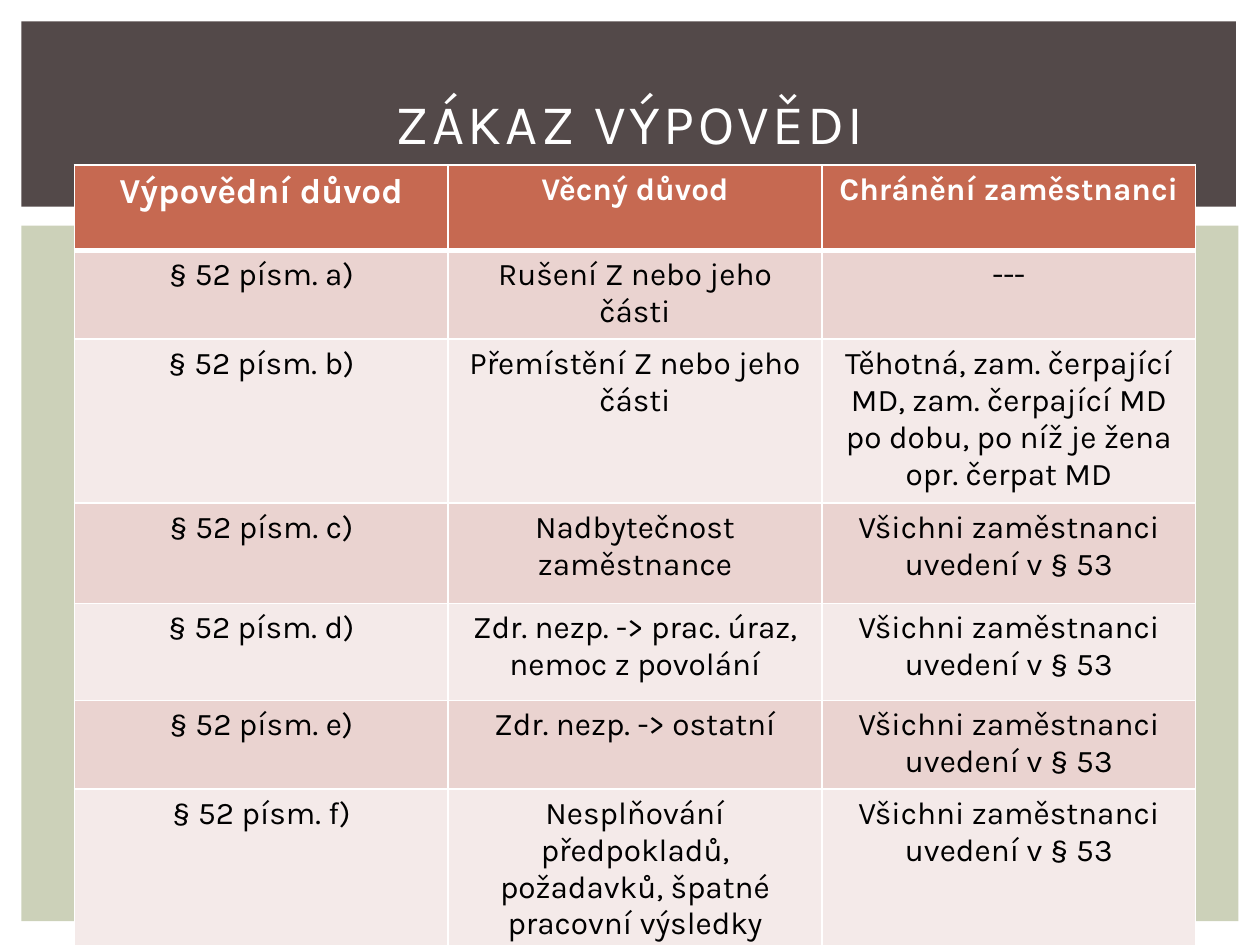
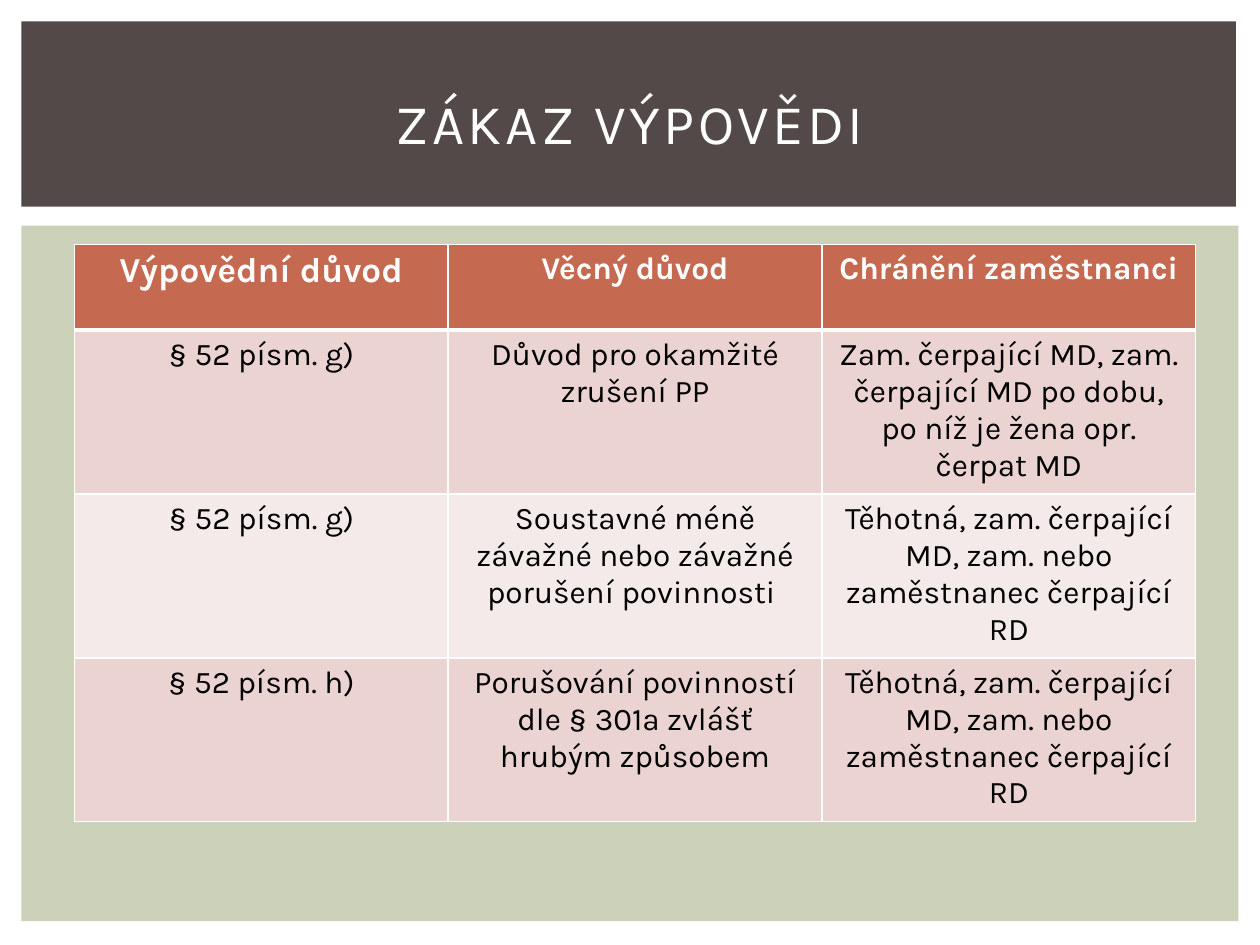
"""Builds two slides that tabulate the notice bans by reason for notice."""
from lxml import etree
from pptx import Presentation
from pptx import util as u
from pptx.dml.color import RGBColor
from pptx.enum import shapes, text
from pptx.oxml import ns

COLORS = {
    "white": "FFFFFF",
    "black": "000000",
    "panel": "CCD1B9",
    "band": "534949",
    "header": "C66951",
    "odd_row": "EAD3D0",
    "even_row": "F4EAE9",
}
FONT = "Karla"
TITLE = "ZÁKAZ VÝPOVĚDI"
HEADINGS = ("Výpovědní důvod", "Věcný důvod", "Chránění zaměstnanci")
ALL_PROTECTED = "Všichni zaměstnanci uvedení v § 53"
PARENTAL_LEAVE = "Těhotná, zam. čerpající MD, zam. nebo zaměstnanec čerpající RD"
MATERNITY = "zam. čerpající MD po dobu, po níž je žena opr. čerpat MD"
TABLE_LEFT, TABLE_WIDTH = 0.59, 8.9
HEADER_HEIGHT = 0.68
THIN, THICK = 0.96, 3

ORGANISATIONAL_REASONS = [
    (0.68, "a", "Rušení Z nebo jeho části", "---"),
    (0.8, "b", "Přemístění Z nebo jeho části", f"Těhotná, zam. čerpající MD, {MATERNITY}"),
    (0.8, "c", "Nadbytečnost zaměstnance", ALL_PROTECTED),
    (0.77, "d", "Zdr. nezp. -> prac. úraz, nemoc z povolání", ALL_PROTECTED),
    (0.68, "e", "Zdr. nezp. -> ostatní", ALL_PROTECTED),
    (1.1, "f", "Nesplňování předpokladů, požadavků, špatné pracovní výsledky", ALL_PROTECTED),
]
BREACH_REASONS = [
    (0.68, "g", "Důvod pro okamžité zrušení PP", f"Zam. čerpající MD, {MATERNITY}"),
    (0.8, "g", "Soustavné méně závažné nebo závažné porušení povinnosti ", PARENTAL_LEAVE),
    (0.8, "h", "Porušování povinností dle § 301a zvlášť hrubým způsobem", PARENTAL_LEAVE),
]


def rgb(name):
    """Return the named palette colour."""
    return RGBColor.from_string(COLORS[name])


def write_text(frame, content, size=18, color="black", bold=False, spacing=None):
    """Write one centred paragraph into a text frame."""
    para = frame.paragraphs[0]
    para.alignment = text.PP_ALIGN.CENTER
    span = para.add_run()
    span.text = content
    span.font.name = FONT
    span.font.size = u.Pt(size)
    span.font.bold = bold
    span.font.color.rgb = rgb(color)
    if spacing:
        span.font._element.set("spc", str(spacing * 100))


def set_borders(cell, top, bottom):
    """Give a cell white borders with the given top and bottom widths."""
    properties = cell._tc.get_or_add_tcPr()
    widths = {"lnL": THIN, "lnR": THIN, "lnT": top, "lnB": bottom}
    for position, (side, width) in enumerate(widths.items()):
        line = etree.Element(ns.qn(f"a:{side}"), w=str(u.Pt(width)))
        fill = etree.SubElement(line, ns.qn("a:solidFill"))
        etree.SubElement(fill, ns.qn("a:srgbClr"), val=COLORS["white"])
        properties.insert(position, line)


class DeckBuilder:
    """Holds the deck style and the current slide."""

    def __init__(self):
        """Start a deck of 10 by 7.5 inches."""
        self.deck = Presentation()
        self.deck.slide_width = u.Inches(10)
        self.deck.slide_height = u.Inches(7.5)
        self.page = None

    def add_page(self):
        """Add a slide with the shared background, bands and title."""
        self.page = self.deck.slides.add_slide(self.deck.slide_layouts[6])
        background = self.page.background.fill
        background.solid()
        background.fore_color.rgb = rgb("white")
        self.add_band("panel", 0.17, 1.79, 9.66, 5.52)
        self.add_band("band", 0.17, 0.17, 9.64, 1.47)
        self.add_title(TITLE)

    def add_band(self, color, *bounds):
        """Add a plain filled rectangle."""
        box = self.page.shapes.add_shape(
            shapes.MSO_SHAPE.RECTANGLE, *map(u.Inches, bounds))
        box.shadow.inherit = False
        box.fill.solid()
        box.fill.fore_color.rgb = rgb(color)
        box.line.fill.background()

    def add_title(self, content):
        """Add the slide title."""
        box = self.page.shapes.add_textbox(*map(u.Inches, (0.42, 0.39, 9.16, 1.15)))
        frame = box.text_frame
        frame.word_wrap = True
        frame.vertical_anchor = text.MSO_ANCHOR.MIDDLE
        write_text(frame, content, size=32, color="white", spacing=2)

    def add_reasons_table(self, top, reasons):
        """Add the table of notice reasons and protected employees."""
        heights = [HEADER_HEIGHT] + [reason[0] for reason in reasons]
        rows = [HEADINGS] + [
            (f"§ 52 písm. {letter})", cause, protected)
            for _, letter, cause, protected in reasons]
        bounds = (TABLE_LEFT, top, TABLE_WIDTH, sum(heights))
        table = self.page.shapes.add_table(
            len(rows), len(HEADINGS), *map(u.Inches, bounds)).table
        for column in table.columns:
            column.width = u.Inches(TABLE_WIDTH / len(HEADINGS))
        for row, (height, contents) in enumerate(zip(heights, rows)):
            table.rows[row].height = u.Inches(height)
            for column, content in enumerate(contents):
                self.fill_cell(table.cell(row, column), row, column, content)

    def fill_cell(self, cell, row, column, content):
        """Fill, border and write one table cell."""
        is_header = row == 0
        fill = "header" if is_header else "odd_row" if row % 2 else "even_row"
        cell.fill.solid()
        cell.fill.fore_color.rgb = rgb(fill)
        set_borders(cell, THICK if row == 1 else THIN, THICK if is_header else THIN)
        write_text(cell.text_frame, content,
                   size=20 if is_header and column == 0 else 18,
                   color="white" if is_header else "black", bold=is_header)


def main():
    """Build both slides and save the deck."""
    builder = DeckBuilder()
    for top, reasons in ((1.31, ORGANISATIONAL_REASONS), (1.94, BREACH_REASONS)):
        builder.add_page()
        builder.add_reasons_table(top, reasons)
    builder.deck.save("out.pptx")


if __name__ == "__main__":
    main()
